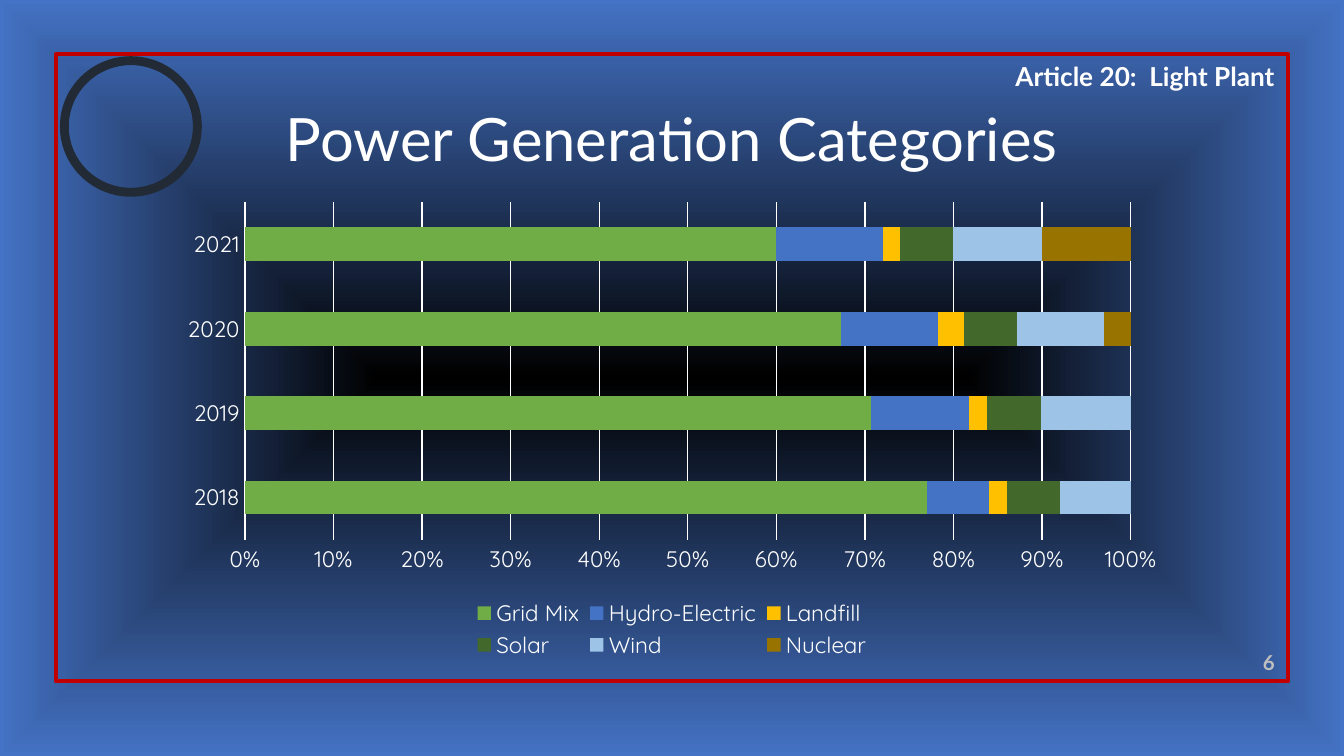
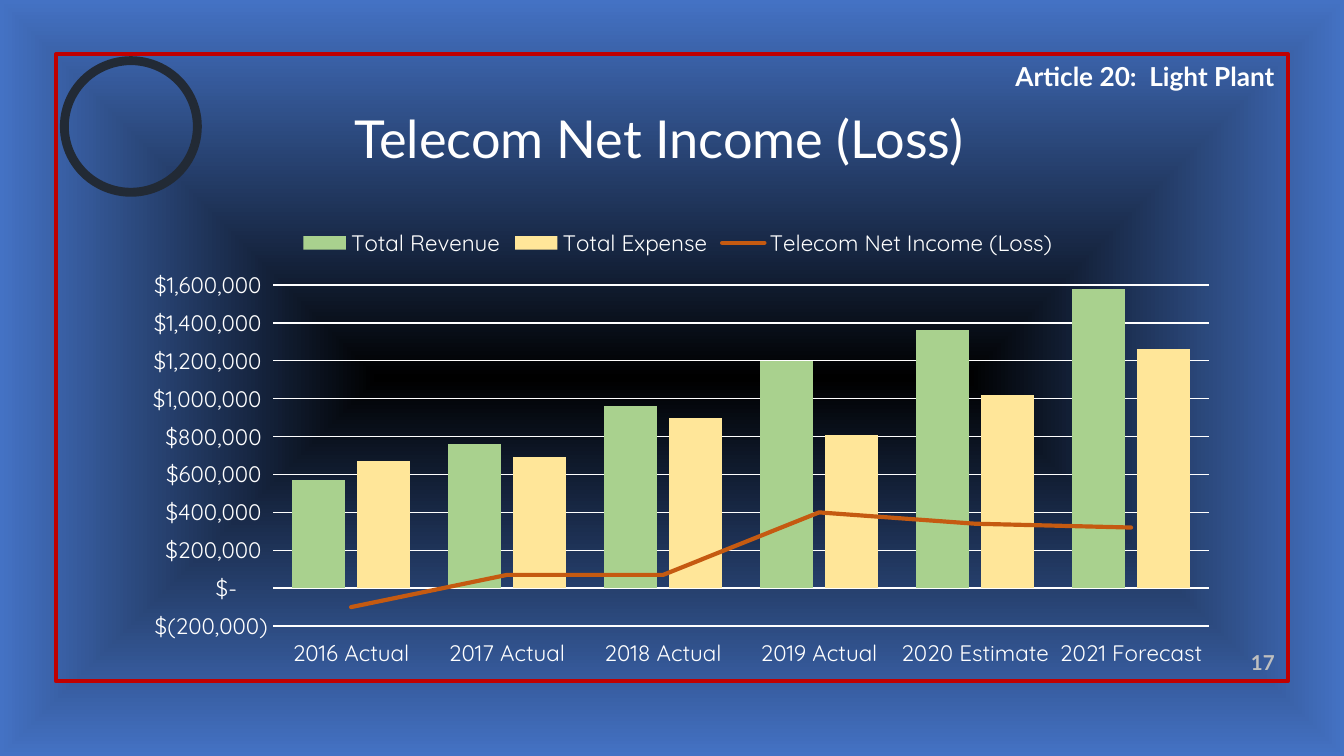
import pptx
import pptx.chart.data
import pptx.dml.color
import pptx.enum.chart
import pptx.enum.shapes
import pptx.enum.text
import pptx.oxml
import pptx.oxml.ns
import pptx.util

Pt = pptx.util.Pt
RGBColor = pptx.dml.color.RGBColor
PP_ALIGN = pptx.enum.text.PP_ALIGN
MSO_ANCHOR = pptx.enum.text.MSO_ANCHOR
MSO_SHAPE = pptx.enum.shapes.MSO_SHAPE
CHART_TYPE = pptx.enum.chart.XL_CHART_TYPE
LEGEND = pptx.enum.chart.XL_LEGEND_POSITION
TICK_MARK = pptx.enum.chart.XL_TICK_MARK
TICK_LABEL = pptx.enum.chart.XL_TICK_LABEL_POSITION
qn = pptx.oxml.ns.qn

# Colours
WHITE = RGBColor(0xFF, 0xFF, 0xFF)
FRAME_RED = RGBColor(0xC0, 0x00, 0x00)
RING = RGBColor(0x22, 0x2A, 0x35)
PAGE_GREY = RGBColor(0xBF, 0xBF, 0xBF)
BACKDROP = [(0, RGBColor(0, 0, 0)),
            (100, RGBColor(0x44, 0x72, 0xC4)),
            (100, RGBColor(0x44, 0x54, 0x6A))]
GREEN = RGBColor(0x70, 0xAD, 0x47)
BLUE = RGBColor(0x44, 0x72, 0xC4)
GOLD = RGBColor(0xFF, 0xC0, 0x00)
DARK_GREEN = RGBColor(0x43, 0x68, 0x2B)
SKY = RGBColor(0x9D, 0xC3, 0xE6)
BROWN = RGBColor(0x99, 0x73, 0x00)
LIGHT_GREEN = RGBColor(0xA9, 0xD1, 0x8E)
CREAM = RGBColor(0xFF, 0xE6, 0x99)
ORANGE = RGBColor(0xC5, 0x5A, 0x11)

TEXT_FONT = "Lato"
CHART_FONT = "Quicksand"
DOLLARS = r'_("$"* #,##0_);_("$"* \(#,##0\);_("$"* "-"??_);_(@_)'


def points(box):
    return [Pt(length) for length in box]


def style_font(font, name, size, color, bold=False):
    font.name = name
    font.size = Pt(size)
    font.color.rgb = color
    font.bold = bold


def place(parent, index, box, frame, inner=False):
    """Fix a chart part at a box given in slide points."""
    for old in parent.findall(qn("c:layout")):
        parent.remove(old)
    left, top, width, height = box
    values = {"x": (left - frame[0]) / frame[2], "y": (top - frame[1]) / frame[3],
              "w": width / frame[2], "h": height / frame[3]}
    target = '<c:layoutTarget val="inner"/>' if inner else ""
    modes = '<c:xMode val="edge"/><c:yMode val="edge"/>'
    numbers = "".join(f'<c:{key} val="{value:.4f}"/>' for key, value in values.items())
    parent.insert(index, pptx.oxml.parse_xml(
        f'<c:layout {pptx.oxml.ns.nsdecls("c")}><c:manualLayout>'
        f'{target}{modes}{numbers}</c:manualLayout></c:layout>'))


class Deck:
    def __init__(self):
        self.presentation = pptx.Presentation()
        self.presentation.slide_width = Pt(720)
        self.presentation.slide_height = Pt(405)
        self.slide = None
        self.paint_backdrop()

    def paint_backdrop(self):
        master = self.presentation.slide_master
        master.background.fill.gradient()
        gradient = master.element.find(".//" + qn("p:bgPr")).find(qn("a:gradFill"))
        stops = "".join(f'<a:gs pos="{position * 1000}"><a:srgbClr val="{color}"/></a:gs>'
                        for position, color in BACKDROP)
        gradient.getparent().replace(gradient, pptx.oxml.parse_xml(
            f'<a:gradFill {pptx.oxml.ns.nsdecls("a")} rotWithShape="1"><a:gsLst>{stops}</a:gsLst>'
            '<a:path path="shape"><a:fillToRect l="50000" t="50000" r="50000" b="50000"/>'
            '</a:path></a:gradFill>'))

    def add_slide(self, title, title_size, number, title_shift=0):
        layout = self.presentation.slide_layouts[5]
        self.slide = self.presentation.slides.add_slide(layout)
        self.add_outline(MSO_SHAPE.RECTANGLE, (30, 29, 660, 336), FRAME_RED, 2.25)
        self.add_text("Article 20:  Light Plant", (498, 29, 192, 24.5), 14, WHITE)
        self.add_outline(MSO_SHAPE.OVAL, (34.5, 32.5, 71.25, 70.5), RING, 4.75)
        self.set_title(title, title_size, title_shift)
        self.add_text(str(number), (648, 347.75, 42, 17.25), 11, PAGE_GREY, MSO_ANCHOR.BOTTOM)

    def add_outline(self, kind, box, color, width):
        shape = self.slide.shapes.add_shape(kind, *points(box))
        shape.shadow.inherit = False
        shape.fill.background()
        shape.line.color.rgb = color
        shape.line.width = Pt(width)

    def add_text(self, text, box, size, color, anchor=MSO_ANCHOR.TOP):
        frame = self.slide.shapes.add_textbox(*points(box)).text_frame
        frame.word_wrap = True
        frame.vertical_anchor = anchor
        paragraph = frame.paragraphs[0]
        paragraph.alignment = PP_ALIGN.RIGHT
        run = paragraph.add_run()
        run.text = text
        style_font(run.font, TEXT_FONT, size, color, bold=True)

    def set_title(self, text, size, shift):
        title = self.slide.shapes.title
        title.left, title.top, title.width, title.height = points((36, 46.75, 648, 54))
        frame = title.text_frame
        frame.auto_size = pptx.enum.text.MSO_AUTO_SIZE.NONE
        frame.vertical_anchor = MSO_ANCHOR.MIDDLE
        frame.margin_right = Pt(7.2 + 2 * shift)
        paragraph = frame.paragraphs[0]
        paragraph.alignment = PP_ALIGN.CENTER
        run = paragraph.add_run()
        run.text = text
        style_font(run.font, TEXT_FONT, size, WHITE)

    def add_chart(self, kind, box, plot_box, categories, series, gap, overlap,
                  value_format, legend_position):
        data = pptx.chart.data.CategoryChartData()
        data.categories = categories
        for name, values, _ in series:
            data.add_series(name, values)
        chart = self.slide.shapes.add_chart(kind, *points(box), data).chart
        chart.has_title = False
        style_font(chart.font, CHART_FONT, 10, WHITE)
        place(chart.element.find(".//" + qn("c:plotArea")), 0, plot_box, box, inner=True)

        plot = chart.plots[0]
        plot.gap_width = gap
        plot.overlap = overlap
        plot.vary_by_categories = False
        for bar, (_, _, color) in zip(plot.series, series):
            bar.format.fill.solid()
            bar.format.fill.fore_color.rgb = color
            bar.invert_if_negative = False

        for axis in (chart.category_axis, chart.value_axis):
            axis.major_tick_mark = axis.minor_tick_mark = TICK_MARK.NONE
            style_font(axis.tick_labels.font, CHART_FONT, 12, WHITE)
        chart.value_axis.has_major_gridlines = True
        chart.value_axis.format.line.fill.background()
        chart.value_axis.tick_labels.number_format = value_format
        chart.value_axis.tick_labels.number_format_is_linked = False
        for line in (chart.category_axis.format.line,
                     chart.value_axis.major_gridlines.format.line):
            line.color.rgb = WHITE
            line.width = Pt(0.75)

        chart.has_legend = True
        chart.legend.position = legend_position
        chart.legend.include_in_layout = False
        style_font(chart.legend.font, CHART_FONT, 12, WHITE)
        return chart

    def turn_last_series_into_line(self, chart, color):
        bars = chart.element.find(".//" + qn("c:barChart"))
        series = bars.findall(qn("c:ser"))[-1]
        for tag in ("c:invertIfNegative", "c:spPr"):
            series.remove(series.find(qn(tag)))
        lines = pptx.oxml.parse_xml(
            f'<c:lineChart {pptx.oxml.ns.nsdecls("c")}><c:grouping val="standard"/>'
            '<c:varyColors val="0"/><c:marker val="1"/>'
            + "".join(f'<c:axId val="{axis.get("val")}"/>' for axis in bars.findall(qn("c:axId")))
            + '</c:lineChart>')
        lines.insert(2, series)
        bars.addnext(lines)
        line_series = chart.plots[1].series[0]
        line_series.smooth = False
        line_series.marker.style = pptx.enum.chart.XL_MARKER_STYLE.NONE
        line_series.format.line.color.rgb = color
        line_series.format.line.width = Pt(2.25)
        series.find(".//" + qn("a:ln")).set("cap", "rnd")


def add_power_slide(deck):
    deck.add_slide("Power Generation Categories", 32, 6)
    box = (90, 103, 540.75, 252.75)
    chart = deck.add_chart(
        CHART_TYPE.BAR_STACKED_100, box, (131.25, 108.25, 474.5, 181),
        ["2018", "2019", "2020", "2021"],
        [("Grid Mix", (77, 70, 68, 60), GREEN),
         ("Hydro-Electric", (7, 11, 11, 12), BLUE),
         ("Landfill", (2, 2, 3, 2), GOLD),
         ("Solar", (6, 6, 6, 6), DARK_GREEN),
         ("Wind", (8, 10, 10, 10), SKY),
         ("Nuclear", (0, 0, 3, 10), BROWN)],
        150, 100, "0%", LEGEND.BOTTOM)
    legend = chart.element.find(".//" + qn("c:legend"))
    place(legend, 1, (250, 319, 220, 36), box)


def add_telecom_slide(deck):
    deck.add_slide("Telecom Net Income (Loss)", 28, 17, title_shift=7)
    chart = deck.add_chart(
        CHART_TYPE.COLUMN_CLUSTERED, (67, 114.5, 592.5, 248.5), (146.25, 152.75, 501.5, 182.75),
        ["2016 Actual", "2017 Actual", "2018 Actual", "2019 Actual",
         "2020 Estimate", "2021 Forecast"],
        [("Total Revenue", (570000, 760000, 960000, 1200000, 1360000, 1580000), LIGHT_GREEN),
         ("Total Expense", (670000, 690000, 900000, 810000, 1020000, 1260000), CREAM),
         ("Telecom Net Income (Loss)", (-100000, 70000, 70000, 400000, 340000, 320000), ORANGE)],
        70, -21, DOLLARS, LEGEND.TOP)
    deck.turn_last_series_into_line(chart, ORANGE)
    chart.category_axis.tick_label_position = TICK_LABEL.LOW
    chart.value_axis.minimum_scale = -200000
    chart.value_axis.maximum_scale = 1600000
    chart.value_axis.major_unit = 200000


def main():
    deck = Deck()
    add_power_slide(deck)
    add_telecom_slide(deck)
    deck.presentation.save("out.pptx")


if __name__ == "__main__":
    main()
